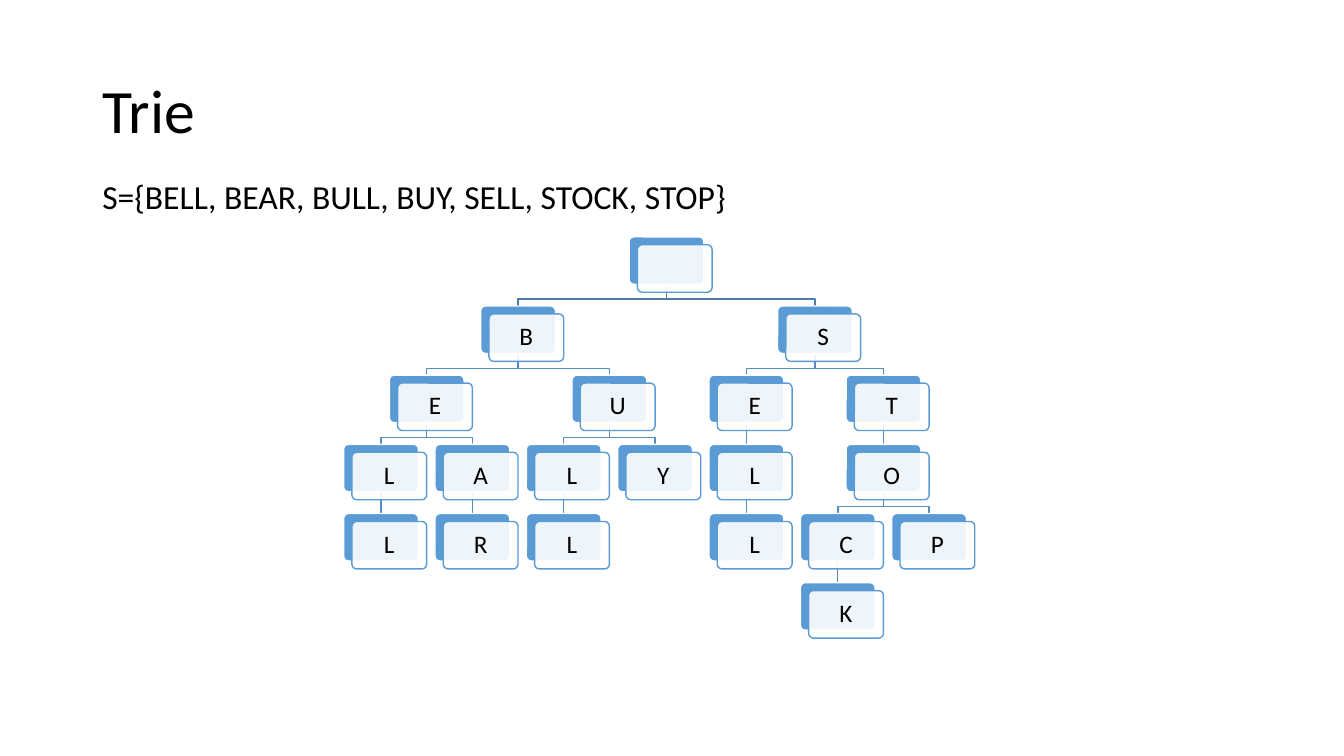
from dataclasses import dataclass
from itertools import count

from lxml.etree import SubElement
from pptx import Presentation
from pptx.dml.color import RGBColor
from pptx.enum.shapes import MSO_CONNECTOR, MSO_SHAPE
from pptx.enum.text import MSO_ANCHOR, MSO_AUTO_SIZE, PP_ALIGN
from pptx.oxml.ns import qn
from pptx.util import Pt


@dataclass(frozen=True)
class Theme:
    """Colours, font and type sizes of the slide."""
    ink: str = "000000"
    paper: str = "FFFFFF"
    card: str = "5B9BD5"
    trunk: str = "497CAB"
    branch: str = "538DC1"
    font: str = "Calibri"
    title: int = 44
    body: int = 24
    label: int = 18


@dataclass
class Node:
    """One letter of the trie with its place in the grid."""
    letter: str
    kids: list
    row: int
    col: float


THEME = Theme()
WORDS = ["BELL", "BEAR", "BULL", "BUY", "SELL", "STOCK", "STOP"]
CARD_W, CARD_H = 53.4, 33.9
SHIFT_X, SHIFT_Y = 5.9, 5.65
BEND = 10.5


def write(frame, text, size, align=PP_ALIGN.LEFT, anchor=MSO_ANCHOR.TOP, lead=None, inset=None):
    """Put formatted text into a text frame."""
    frame.vertical_anchor = anchor
    if inset is not None:
        frame.margin_left = frame.margin_right = Pt(inset)
        frame.margin_top = frame.margin_bottom = Pt(inset)
    para = frame.paragraphs[0]
    para.alignment = align
    if lead:
        para.line_spacing = lead
    run = para.add_run()
    run.text = text
    run.font.name = THEME.font
    run.font.size = Pt(size)
    run.font.color.rgb = RGBColor.from_string(THEME.ink)


def stroke(line, color):
    """Set a one-point line in the given colour."""
    line.width = Pt(1)
    line.color.rgb = RGBColor.from_string(color)


def grow(words):
    """Nest the letters of the words as a tree of dicts."""
    tree = {}
    for word in words:
        spot = tree
        for letter in word:
            spot = spot.setdefault(letter, {})
    return tree


def arrange(letter, tree, row, leaf):
    """Give each leaf a column and centre each parent over its kids."""
    kids = [arrange(key, sub, row + 1, leaf) for key, sub in tree.items()]
    col = (kids[0].col + kids[-1].col) / 2 if kids else next(leaf)
    return Node(letter, kids, row, col)


def walk(node):
    """List a node and all nodes below it."""
    return [node] + [item for kid in node.kids for item in walk(kid)]


def add_plate(slide, x, y, fill, edge):
    """Draw one rounded plate of a card."""
    plate = slide.shapes.add_shape(
        MSO_SHAPE.ROUNDED_RECTANGLE, Pt(x), Pt(y), Pt(CARD_W), Pt(CARD_H))
    plate.adjustments[0] = 0.1
    plate.shadow.inherit = False
    plate.fill.solid()
    plate.fill.fore_color.rgb = RGBColor.from_string(fill)
    stroke(plate.line, edge)
    return plate


def add_card(slide, x, y, letter):
    """Draw a solid plate with a lettered, see-through plate over it."""
    back = add_plate(slide, x, y, THEME.card, THEME.paper)
    front = add_plate(slide, x + SHIFT_X, y + SHIFT_Y, THEME.paper, THEME.card)
    tint = front.fill._xPr.find(qn("a:solidFill"))[0]
    SubElement(tint, qn("a:alpha"), val="90000")
    if letter:
        write(front.text_frame, letter, THEME.label, align=PP_ALIGN.CENTER,
              anchor=MSO_ANCHOR.MIDDLE, lead=0.9, inset=5)
    return back


def add_elbow(slide, start, end, color):
    """Draw a bent branch from a parent to a kid."""
    bend = start[1] + BEND
    points = [(start[0], bend), (end[0], bend), end]
    pen = slide.shapes.build_freeform(Pt(start[0]), Pt(start[1]))
    pen.add_line_segments([(Pt(x), Pt(y)) for x, y in points], close=False)
    elbow = pen.convert_to_shape()
    elbow.shadow.inherit = False
    elbow.fill.background()
    stroke(elbow.line, color)


def add_stem(slide, start, end, color):
    """Draw a straight branch from a parent to its only kid."""
    ends = [Pt(value) for value in start + end]
    stem = slide.shapes.add_connector(MSO_CONNECTOR.STRAIGHT, *ends)
    SubElement(stem._element.spPr, qn("a:effectLst"))
    stroke(stem.line, color)
    return stem


def add_trie(slide, words, left, top, width, height):
    """Lay out the trie of the words in a box."""
    root = arrange("", grow(words), 0, count())
    nodes = walk(root)
    step_x = (width - CARD_W - SHIFT_X) / max(node.col for node in nodes)
    step_y = (height - CARD_H - SHIFT_Y) / max(node.row for node in nodes)

    def spot(node):
        return left + node.col * step_x, top + node.row * step_y

    stems = []
    for node in nodes:
        x, y = spot(node)
        start = (x + CARD_W / 2, y + CARD_H)
        color = THEME.branch if node.row else THEME.trunk
        for kid in node.kids:
            x, y = spot(kid)
            end = (x + CARD_W / 2, y)
            if len(node.kids) == 1:
                stems.append((add_stem(slide, start, end, color), node, kid))
            else:
                add_elbow(slide, start, end, color)
    cards = {id(node): add_card(slide, *spot(node), node.letter) for node in nodes}
    for stem, node, kid in stems:
        stem.begin_connect(cards[id(node)], 2)
        stem.end_connect(cards[id(kid)], 0)


def add_title(slide, text, left, top, width, height):
    """Place and format the slide title."""
    title = slide.shapes.title
    title.left, title.top = Pt(left), Pt(top)
    title.width, title.height = Pt(width), Pt(height)
    write(title.text_frame, text, THEME.title, anchor=MSO_ANCHOR.MIDDLE, lead=0.9)


def add_words(slide, words, left, top, width, height):
    """Write the set of words on one line."""
    box = slide.shapes.add_textbox(Pt(left), Pt(top), Pt(width), Pt(height))
    box.text_frame.word_wrap = False
    box.text_frame.auto_size = MSO_AUTO_SIZE.SHAPE_TO_FIT_TEXT
    write(box.text_frame, f"S={{{', '.join(words)}}}", THEME.body)


def main():
    """Build and save the slide."""
    deck = Presentation()
    deck.slide_width, deck.slide_height = Pt(960), Pt(540)
    slide = deck.slides.add_slide(deck.slide_layouts[5])
    add_title(slide, "Trie", 66, 28.75, 828, 104.4)
    add_trie(slide, WORDS, 245.5, 169.2, 450.8, 286.6)
    add_words(slide, WORDS, 66, 122.4, 464.4, 36)
    deck.save("out.pptx")


if __name__ == "__main__":
    main()
